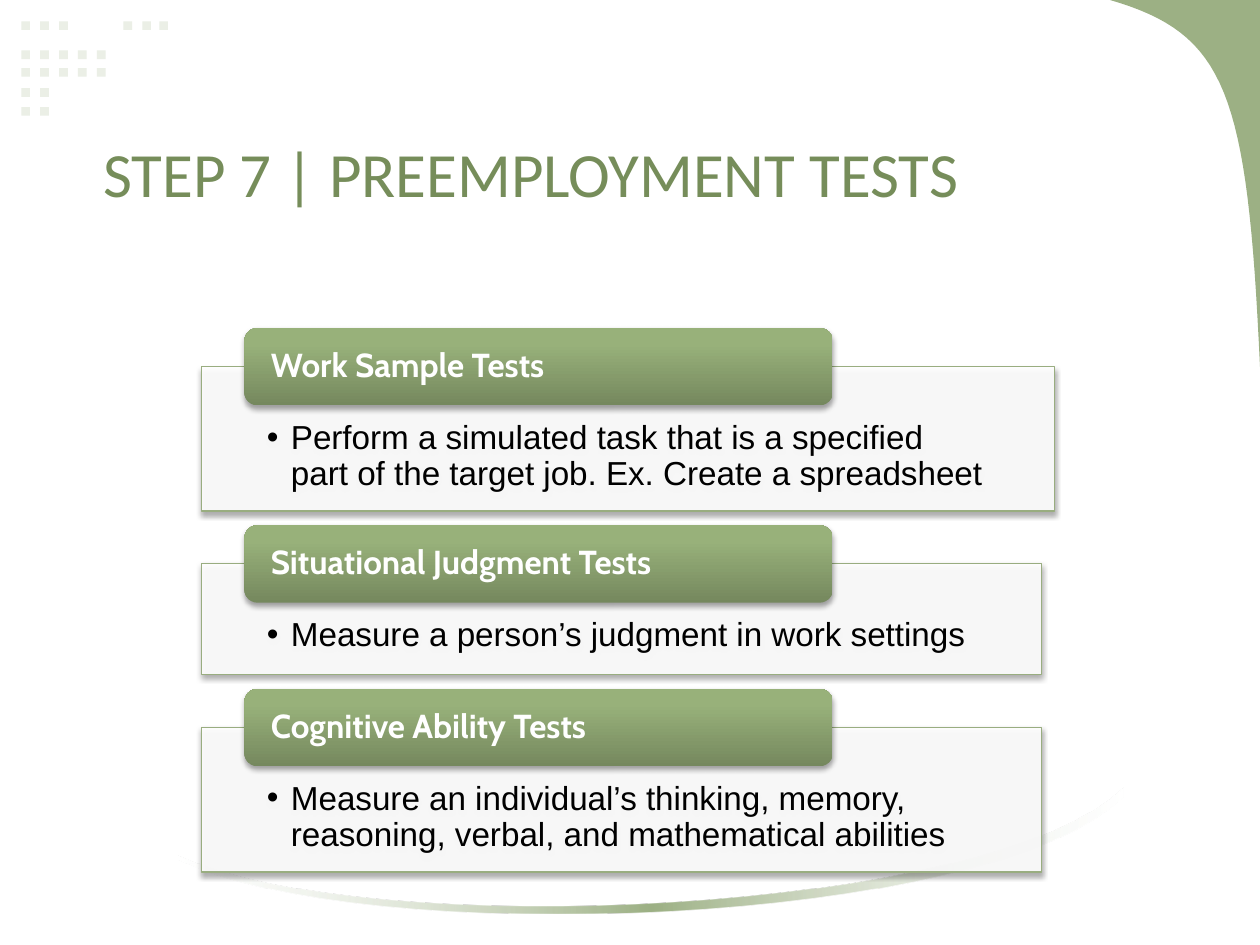
from lxml.etree import SubElement
from pptx import Presentation
from pptx.dml.color import RGBColor
from pptx.enum.shapes import MSO_SHAPE as Shape
from pptx.enum.text import MSO_ANCHOR as Anchor, PP_ALIGN as Align
from pptx.oxml import parse_xml
from pptx.oxml.ns import nsdecls, qn
from pptx.util import Pt

TITLE = "STEP 7 | PREEMPLOYMENT TESTS"
TESTS = [
    ("Work Sample Tests", "Perform a simulated task that is a specified part of the "
     "target job. Ex. Create a spreadsheet", 487.4, 82.7),
    ("Situational Judgment Tests", "Measure a person’s judgment in work settings", 480.2, 63.5),
    ("Cognitive Ability Tests", "Measure an individual’s thinking, memory, reasoning, "
     "verbal, and mathematical abilities", 480.2, 82.7),
]
DOT_ROWS = [
    (12.2, (0, 1, 2, 5.4, 6.4, 7.3)),
    (28.8, range(5)),
    (38.9, range(5)),
    (50.4, range(2)),
    (61.2, range(2)),
]
CORNER_CURVE = [(720, 209.5), (712.8, 51.8), (700.6, 19.4), (634.3, 0)]
UPPER_CURVE = [(102.2, 488.9), (208.5, 538.6), (568.6, 523.1), (642.2, 450)]
LOWER_CURVE = [(642.2, 455), (567.6, 530.6), (203.8, 542.2), (102.2, 491)]
LABEL_FILL = [(0, "75885E", 100), (80, "98B17A", 100), (100, "99B379", 100)]
SWOOSH_FILL = [(0, "FFFFFF", 30), (50, "9CB084", 100), (100, "FFFFFF", 30)]
DOT_LEFT, DOT_STEP, DOT_SIZE = 12.2, 10.8, 5
FIRST_TOP, LABEL_RISE, TEST_GAP = 187.4, 22, 8
PANEL_LEFT, LABEL_LEFT, LABEL_WIDTH, LABEL_HEIGHT = 115.2, 139.7, 336.2, 44.3


def color(value):
    return RGBColor.from_string(value)


def paint(shape, value):
    shape.shadow.inherit = False
    shape.fill.solid()
    shape.fill.fore_color.rgb = color(value)
    shape.line.fill.background()


def paint_gradient(shape, stops, angle):
    gradient = parse_xml(f'<a:gradFill {nsdecls("a")} rotWithShape="1"><a:gsLst/>'
                         f'<a:lin ang="{angle * 60000}" scaled="0"/></a:gradFill>')
    for position, value, opacity in stops:
        stop = SubElement(gradient[0], qn("a:gs"), pos=str(position * 1000))
        tone = SubElement(stop, qn("a:srgbClr"), val=value)
        if opacity < 100:
            SubElement(tone, qn("a:alpha"), val=str(opacity * 1000))
    shape._element.spPr.insert(2, gradient)
    shape.shadow.inherit = False
    shape.line.fill.background()


def add_shadow(shape):
    effects = shape._element.spPr.find(qn("a:effectLst"))
    shadow = SubElement(effects, qn("a:outerShdw"), blurRad=str(Pt(3.1)), dist=str(Pt(1.8)),
                        dir="5400000", rotWithShape="0")
    tone = SubElement(shadow, qn("a:srgbClr"), val="000000")
    SubElement(tone, qn("a:alpha"), val="35000")


def curve_points(controls, steps=32):
    points = []
    for step in range(steps + 1):
        t = step / steps
        weights = ((1 - t) ** 3, 3 * t * (1 - t) ** 2, 3 * t * t * (1 - t), t ** 3)
        points.append(tuple(Pt(sum(w * c[axis] for w, c in zip(weights, controls)))
                            for axis in (0, 1)))
    return points


def add_outline(page, points):
    builder = page.shapes.build_freeform(*points[0], scale=1.0)
    builder.add_line_segments(points[1:], close=True)
    return builder.convert_to_shape()


def add_box(page, kind, *place):
    return page.shapes.add_shape(kind, *(Pt(value) for value in place))


def style_text(frame, size, font, value, bold=False):
    for span in frame.paragraphs[0].runs:
        span.font.size, span.font.name, span.font.bold = Pt(size), font, bold
        span.font.color.rgb = color(value)


def fill_text(box, text, insets, anchor):
    frame = box.text_frame
    frame.text = text
    frame.word_wrap = True
    frame.vertical_anchor = anchor
    across, above, below = insets
    frame.margin_left = frame.margin_right = Pt(across)
    frame.margin_top, frame.margin_bottom = Pt(above), Pt(below)
    para = frame.paragraphs[0]
    para.alignment, para.line_spacing = Align.LEFT, 0.9
    return frame


def add_panel(page, text, top, width, height):
    panel = add_box(page, Shape.RECTANGLE, PANEL_LEFT, top, width, height)
    paint(panel, "FFFFFF")
    tone = panel._element.spPr.find(qn("a:solidFill"))[0]
    SubElement(tone, qn("a:alpha"), val="90000")
    panel.line.color.rgb = color("99AD80")
    panel.line.width = Pt(0.75)
    add_shadow(panel)
    frame = fill_text(panel, text, (37.4, 31, 10.8), Anchor.TOP)
    para = frame.paragraphs[0]
    para.level = 1
    settings = para._p.get_or_add_pPr()
    settings.set("marL", str(Pt(13.7)))
    settings.set("indent", str(Pt(-13.7)))
    SubElement(settings, qn("a:buFont"), typeface="Arial")
    SubElement(settings, qn("a:buChar"), char="•")
    style_text(frame, 19, "Arial", "000000")


def add_label(page, text, top):
    label = add_box(page, Shape.ROUNDED_RECTANGLE, LABEL_LEFT, top, LABEL_WIDTH, LABEL_HEIGHT)
    label.adjustments[0] = 0.17
    paint_gradient(label, LABEL_FILL, 270)
    add_shadow(label)
    frame = fill_text(label, text, (13, 0, 0), Anchor.MIDDLE)
    style_text(frame, 19, "Cabin", "FFFFFF", True)


def add_decoration(page):
    for top, columns in DOT_ROWS:
        for column in columns:
            paint(add_box(page, Shape.RECTANGLE, DOT_LEFT + column * DOT_STEP, top,
                          DOT_SIZE, DOT_SIZE), "EBEFE6")
    paint(add_outline(page, curve_points(CORNER_CURVE) + [(Pt(720), Pt(0))]), "9CB084")
    swoosh = add_outline(page, curve_points(UPPER_CURVE) + curve_points(LOWER_CURVE))
    paint_gradient(swoosh, SWOOSH_FILL, 0)


def add_title(page):
    title = page.shapes.title
    title.left, title.top, title.width, title.height = Pt(51.8), Pt(59.8), Pt(619.2), Pt(77.8)
    frame = title.text_frame
    frame.text = TITLE
    frame.vertical_anchor = Anchor.MIDDLE
    frame.paragraphs[0].alignment = Align.LEFT
    style_text(frame, 36, "Calibri", "768D5A")


def main():
    """Build the preemployment tests slide."""
    deck = Presentation()
    deck.slide_width, deck.slide_height = Pt(720), Pt(540)
    page = deck.slides.add_slide(deck.slide_layouts[5])
    add_decoration(page)
    add_title(page)
    top = FIRST_TOP
    for name, detail, width, height in TESTS:
        add_panel(page, detail, top + LABEL_RISE, width, height)
        add_label(page, name, top)
        top += LABEL_RISE + height + TEST_GAP
    deck.save("out.pptx")


if __name__ == "__main__":
    main()
